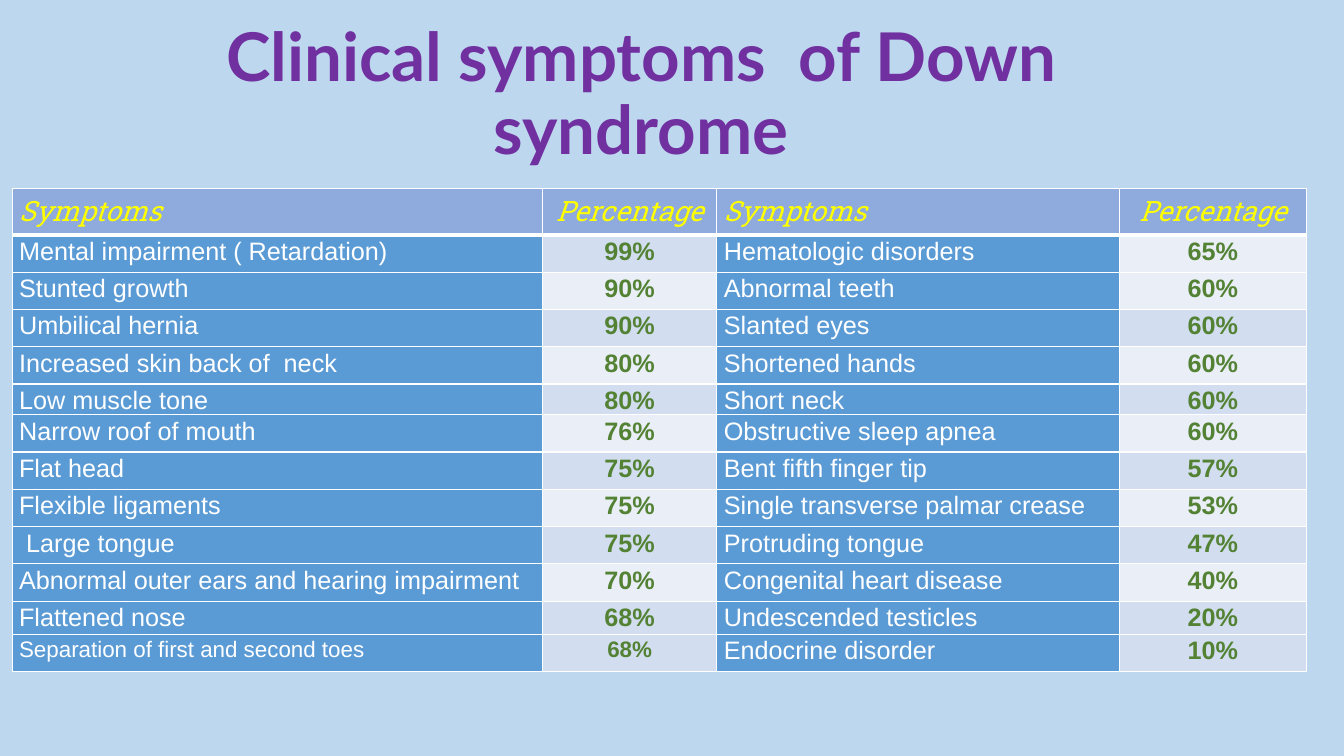
from lxml import etree
from pptx import Presentation
from pptx.dml.color import RGBColor
from pptx.enum.text import MSO_ANCHOR, MSO_AUTO_SIZE, PP_ALIGN
from pptx.oxml.ns import qn
from pptx.util import Inches, Pt

LEFT, CENTER = PP_ALIGN.LEFT, PP_ALIGN.CENTER
MIDDLE = MSO_ANCHOR.MIDDLE
NO_AUTOFIT = MSO_AUTO_SIZE.NONE

PALE_BLUE = RGBColor(0xBD, 0xD7, 0xEE)
PURPLE = RGBColor(0x70, 0x30, 0xA0)
PERIWINKLE = RGBColor(0x8F, 0xAA, 0xDC)
YELLOW = RGBColor(0xFF, 0xFF, 0x00)
BLUE = RGBColor(0x5B, 0x9B, 0xD5)
WHITE = RGBColor(0xFF, 0xFF, 0xFF)
GREEN = RGBColor(0x54, 0x82, 0x35)
DARK_BAND = RGBColor(0xD2, 0xDE, 0xEF)
LIGHT_BAND = RGBColor(0xEA, 0xEF, 0xF7)

SLIDE_WIDTH, SLIDE_HEIGHT = Inches(13.33), Inches(7.5)
COLUMN_WIDTHS = [5.26, 1.73, 3.99, 1.86]
ROW_HEIGHTS = [0.46] + [0.37] * 4 + [0.22] + [0.37] * 5 + [0.33, 0.37]

HEADINGS = ["Symptoms", "Percentage"] * 2
SYMPTOMS = [
    ("Mental impairment ( Retardation)", "99%", "Hematologic disorders", "65%"),
    ("Stunted growth", "90%", "Abnormal teeth", "60%"),
    ("Umbilical hernia", "90%", "Slanted eyes", "60%"),
    ("Increased skin back of  neck", "80%", "Shortened hands", "60%"),
    ("Low muscle tone", "80%", "Short neck", "60%"),
    ("Narrow roof of mouth", "76%", "Obstructive sleep apnea", "60%"),
    ("Flat head", "75%", "Bent fifth finger tip", "57%"),
    ("Flexible ligaments", "75%", "Single transverse palmar crease", "53%"),
    (" Large tongue", "75%", "Protruding tongue", "47%"),
    ("Abnormal outer ears and hearing impairment", "70%",
     "Congenital heart disease", "40%"),
    ("Flattened nose", "68%", "Undescended testicles", "20%"),
    ("Separation of first and second toes", "68%", "Endocrine disorder", "10%"),
]
LAST_ROW = len(SYMPTOMS)


def set_font(paragraph, name, size, color, bold=False, italic=False):
    font = paragraph.font
    font.name, font.size = name, Pt(size)
    font.bold, font.italic = bold, italic
    font.color.rgb = color


def set_borders(cell, top=1, bottom=1):
    """Give the cell white borders; widths are in points."""
    properties = cell._tc.get_or_add_tcPr()
    for side, width in (("L", 1), ("R", 1), ("T", top), ("B", bottom)):
        line = etree.SubElement(properties, qn(f"a:ln{side}"), w=str(Pt(width)))
        solid = etree.SubElement(line, qn("a:solidFill"))
        etree.SubElement(solid, qn("a:srgbClr"), val=str(WHITE))


def fill_cell(cell, text, color, alignment):
    """Write the text on a plain fill and return its paragraph."""
    cell.margin_left = cell.margin_right = Inches(0.07)
    cell.margin_top, cell.margin_bottom = Inches(0.01), 0
    cell.fill.solid()
    cell.fill.fore_color.rgb = color
    cell.text = text
    paragraph = cell.text_frame.paragraphs[0]
    paragraph.alignment = alignment
    paragraph.line_spacing = 1.06
    return paragraph


def band_color(row, column):
    if row == LAST_ROW:
        return DARK_BAND
    if (row, column) == (1, 3):
        return LIGHT_BAND
    return DARK_BAND if row % 2 else LIGHT_BAND


def add_title(slide, text):
    title = slide.shapes.title
    title.left, title.top = Inches(0.72), Inches(0.29)
    title.width, title.height = Inches(11.28), Inches(1.33)
    frame = title.text_frame
    frame.text = text
    frame.word_wrap = True
    frame.auto_size = NO_AUTOFIT
    frame.vertical_anchor = MIDDLE
    heading = frame.paragraphs[0]
    heading.alignment = CENTER
    heading.line_spacing = 0.9
    set_font(heading, "Lato", 48, PURPLE, bold=True)


def add_symptom_table(slide):
    table = slide.shapes.add_table(
        len(ROW_HEIGHTS), len(COLUMN_WIDTHS), Inches(0.12), Inches(1.87),
        Inches(sum(COLUMN_WIDTHS)), Inches(sum(ROW_HEIGHTS))).table
    for column, width in zip(table.columns, COLUMN_WIDTHS):
        column.width = Inches(width)
    for row, height in zip(table.rows, ROW_HEIGHTS):
        row.height = Inches(height)

    for column, heading in enumerate(HEADINGS):
        cell = table.cell(0, column)
        set_borders(cell, bottom=3)
        alignment = CENTER if column % 2 else LEFT
        paragraph = fill_cell(cell, heading, PERIWINKLE, alignment)
        set_font(paragraph, "Roboto Slab", 20, YELLOW, italic=True)

    for row, entries in enumerate(SYMPTOMS, start=1):
        for column, entry in enumerate(entries):
            cell = table.cell(row, column)
            set_borders(cell, top=3 if row == 1 else 1)
            smaller = row == LAST_ROW and column < 2
            size = 16 if smaller else 18
            if column % 2:
                paragraph = fill_cell(cell, entry, band_color(row, column), CENTER)
                set_font(paragraph, "Arial", size, GREEN, bold=True)
            else:
                paragraph = fill_cell(cell, entry, BLUE, LEFT)
                set_font(paragraph, "Arial", size, WHITE)
            if smaller:
                paragraph.space_after = Pt(8)


def main():
    presentation = Presentation()
    presentation.slide_width = SLIDE_WIDTH
    presentation.slide_height = SLIDE_HEIGHT
    title_only = presentation.slide_layouts[5]
    slide = presentation.slides.add_slide(title_only)
    slide.background.fill.solid()
    slide.background.fill.fore_color.rgb = PALE_BLUE
    add_title(slide, "Clinical symptoms  of Down syndrome")
    add_symptom_table(slide)
    presentation.save("out.pptx")


if __name__ == "__main__":
    main()
